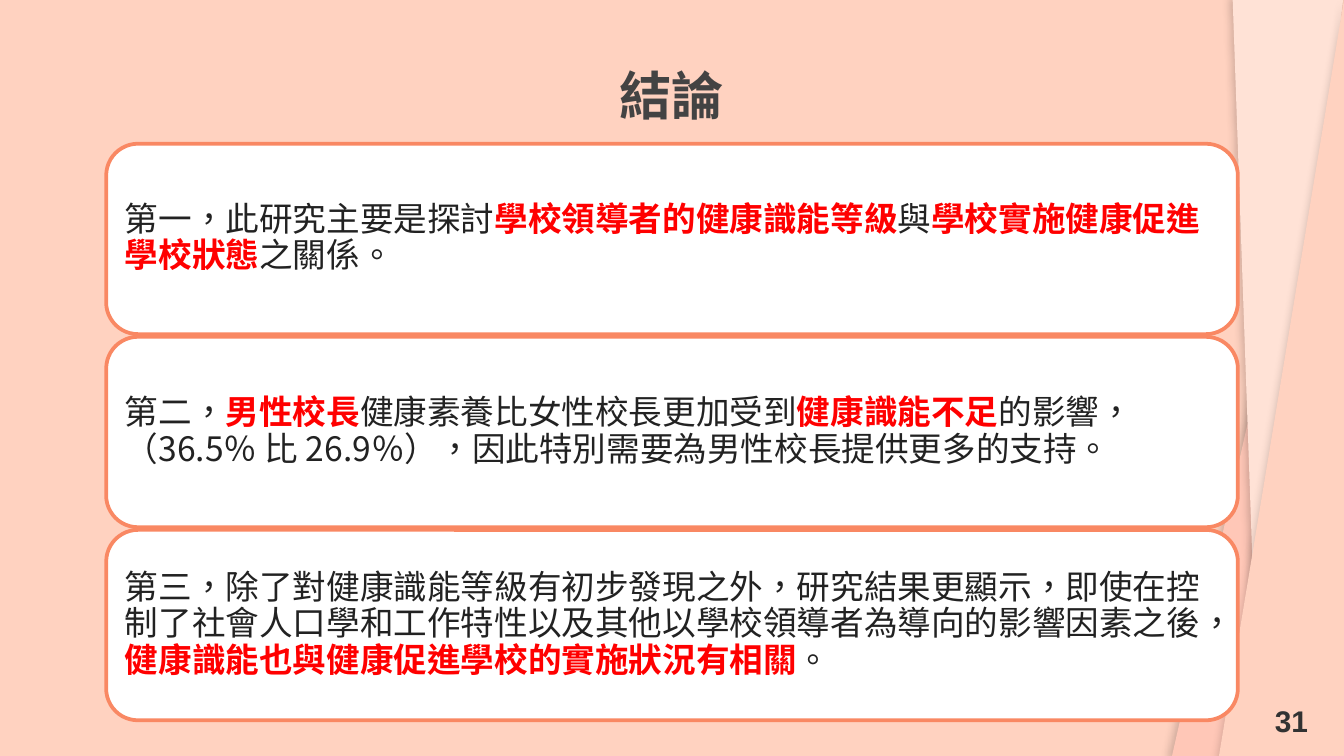
import pptx
import pptx.dml.color
import pptx.enum.shapes
import pptx.enum.text
import pptx.oxml
import pptx.oxml.ns
import pptx.util

Inches = pptx.util.Inches
ALIGN = pptx.enum.text.PP_ALIGN
ANCHOR = pptx.enum.text.MSO_ANCHOR

WIDTH = 10
HEIGHT = WIDTH * 9 / 16
COLORS = {
    "background": "FFD2C0", "rose": "FFC7B7", "cream": "FFE2D6",
    "card": "FFFFFF", "border": "F98863", "title": "434343",
    "body": "222222", "key": "FF0000", "number": "323232",
}
CJK = "Noto Sans CJK SC"
STYLES = {
    "title": {"size": 28, "name": CJK, "bold": True},
    "body": {"size": 18, "name": CJK, "bold": False},
    "key": {"size": 18, "name": CJK, "bold": True},
    "number": {"size": 16, "name": "Arial", "bold": True},
}

# Corner bands: colour, shadow distance, shadow direction, points
BANDS = [
    ("rose", 3, 160, [(10, 0), (8.72, HEIGHT), (9.09, HEIGHT)]),
    ("cream", 3, 120, [(9.17, -0.06), (9.37, HEIGHT), (10, -0.06)]),
    ("background", 2.2, 120, [(10, HEIGHT), (10, 0), (9.07, HEIGHT)]),
]

# Each conclusion is a list of (style, text) runs
CONCLUSIONS = [
    [("body", "第一，此研究主要是探討"), ("key", "學校領導者的健康識能等級"),
     ("body", "與"), ("key", "學校實施健康促進學校狀態"), ("body", "之關係。")],
    [("body", "第二，"), ("key", "男性校長"),
     ("body", "健康素養比女性校長更加受到"), ("key", "健康識能不足"),
     ("body", "的影響，（36.5％ 比 26.9％），因此特別需要為男性校長提供更多的支持。")],
    [("body", "第三，除了對健康識能等級有初步發現之外，研究結果更顯示，即使在控制了"
              "社會人口學和工作特性以及其他以學校領導者為導向的影響因素之後，"),
     ("key", "健康識能也與健康促進學校的實施狀況有相關"), ("body", "。")],
]


def color(name):
    return pptx.dml.color.RGBColor.from_string(COLORS[name])


def fill_shape(shape, name):
    shape.fill.solid()
    shape.fill.fore_color.rgb = color(name)
    shape.shadow.inherit = False


def write_text(shape, runs, align, anchor, inset):
    frame = shape.text_frame
    margins = dict.fromkeys(
        ("margin_left", "margin_top", "margin_right", "margin_bottom"), Inches(inset))
    for key, value in {"word_wrap": True, "vertical_anchor": anchor,
                       "auto_size": pptx.enum.text.MSO_AUTO_SIZE.NONE, **margins}.items():
        setattr(frame, key, value)
    paragraph = frame.paragraphs[0]
    paragraph.alignment = align
    for style, text in runs:
        run = paragraph.add_run()
        run.text = text
        for key, value in STYLES[style].items():
            setattr(run.font, key, pptx.util.Pt(value) if key == "size" else value)
        run.font.color.rgb = color(style)
        # Traditional Chinese centres its punctuation; its typeface comes from a:ea
        properties = run.font._element
        properties.set("lang", "zh-TW")
        properties.append(pptx.oxml.parse_xml(
            f'<a:ea {pptx.oxml.ns.nsdecls("a")} typeface="{STYLES[style]["name"]}"/>'))
    return paragraph


def add_bands(slide):
    for name, distance, direction, points in BANDS:
        corners = [(Inches(x), Inches(y)) for x, y in points]
        builder = slide.shapes.build_freeform(*corners[0])
        builder.add_line_segments(corners[1:], close=True)
        band = builder.convert_to_shape()
        fill_shape(band, name)
        band.line.fill.background()
        shadow = pptx.oxml.parse_xml(
            f'<a:outerShdw {pptx.oxml.ns.nsdecls("a")} blurRad="{pptx.util.Pt(4.5)}" '
            f'dist="{pptx.util.Pt(distance)}" dir="{direction * 60000}" '
            'algn="bl" rotWithShape="0"><a:srgbClr val="000000">'
            '<a:alpha val="18000"/></a:srgbClr></a:outerShdw>')
        band._element.spPr.find(pptx.oxml.ns.qn("a:effectLst")).append(shadow)


def add_title(slide, left, top, width, height):
    title = slide.shapes.title
    for key, value in {"left": left, "top": top, "width": width, "height": height}.items():
        setattr(title, key, Inches(value))
    write_text(title, [("title", "結論")], ALIGN.CENTER, ANCHOR.TOP, 0.1)


def add_cards(slide, left, top, width, height, gap=0.02):
    count = len(CONCLUSIONS)
    card_height = (height - gap * (count - 1)) / count
    for row, runs in enumerate(CONCLUSIONS):
        card = slide.shapes.add_shape(
            pptx.enum.shapes.MSO_SHAPE.ROUNDED_RECTANGLE, Inches(left),
            Inches(top + row * (card_height + gap)), Inches(width), Inches(card_height))
        fill_shape(card, "card")
        card.line.color.rgb = color("border")
        card.line.width = pptx.util.Pt(2)
        paragraph = write_text(card, runs, ALIGN.LEFT, ANCHOR.MIDDLE, 0.07)
        paragraph.line_spacing = 0.9


def add_page_number(slide, left, top, width, height):
    box = slide.shapes.add_textbox(*map(Inches, (left, top, width, height)))
    write_text(box, [("number", "31")], ALIGN.RIGHT, ANCHOR.MIDDLE, 0.1)


def main():
    presentation = pptx.Presentation()
    presentation.slide_width = Inches(WIDTH)
    presentation.slide_height = Inches(HEIGHT)
    slide = presentation.slides.add_slide(presentation.slide_layouts.get_by_name("Title Only"))
    slide.background.fill.solid()
    slide.background.fill.fore_color.rgb = color("background")

    margin = 0.079 * WIDTH
    content_width = WIDTH - 2 * margin
    add_bands(slide)
    add_title(slide, margin, 0.37, content_width, 0.52)
    add_page_number(slide, 7.58, 5.21, 2.25, 0.3)
    add_cards(slide, margin, 1.07, content_width, 4.29)
    presentation.save("out.pptx")


if __name__ == "__main__":
    main()
